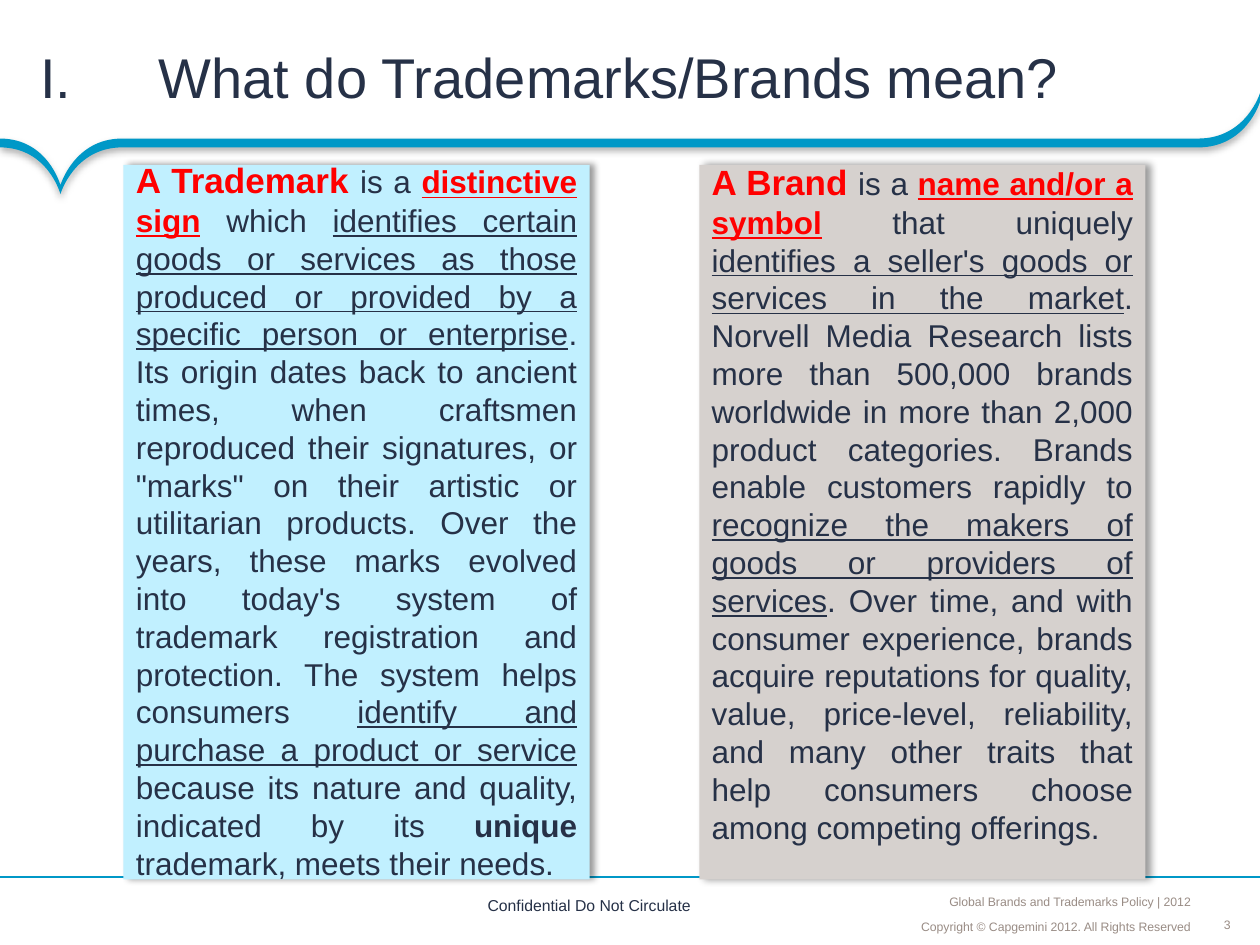
from lxml.etree import SubElement as Sub
from pptx import Presentation
from pptx.dml.color import RGBColor
from pptx.enum.shapes import MSO_CONNECTOR as Line, MSO_SHAPE as Shape
from pptx.enum.text import MSO_ANCHOR as Anchor, PP_ALIGN as Align
from pptx.oxml.ns import qn
from pptx.util import Emu, Inches, Pt

NAVY, RED, BLUE, GREY = "263147", "FF0000", "0098C7", "998C85"

# Run styles: size, colour, bold, underline
LEAD = (20, RED, True, False)
KEY = (18, RED, True, True)
BODY = (18, NAVY, False, False)
LINK = (18, NAVY, False, True)
BOLD = (18, NAVY, True, False)
FOOT = (7, GREY, False, False)

MARK = [
    ("A Trademark ", LEAD), ("is a ", BODY), ("distinctive sign", KEY),
    (" which ", BODY),
    ("identifies certain goods or services as those produced or provided "
     "by a specific person or enterprise", LINK),
    (". Its origin dates back to ancient times, when craftsmen reproduced "
     "their signatures, or \"marks\" on their artistic or utilitarian "
     "products. Over the years, these marks evolved into today's system of "
     "trademark registration and protection. The system helps consumers ",
     BODY),
    ("identify and purchase a product or service ", LINK),
    ("because its nature and quality, indicated by its ", BODY),
    ("unique", BOLD), (" trademark, meets their needs.", BODY),
]
BRAND = [
    ("A Brand ", LEAD), ("is a ", BODY), ("name and/or a symbol", KEY),
    (" that uniquely ", BODY),
    ("identifies a seller's goods or services in the market", LINK),
    (". Norvell Media Research lists more than 500,000 brands worldwide in "
     "more than 2,000 product categories. Brands enable customers rapidly "
     "to ", BODY),
    ("recognize the makers of goods or providers of services", LINK),
    (". Over time, and with consumer experience, brands acquire reputations "
     "for quality, value, price-level, reliability, and many other traits "
     "that help consumers choose among competing offerings.", BODY),
]


def color(code):
    return RGBColor.from_string(code)


def add_run(para, text, style):
    run = para.add_run()
    run.text = text
    font = run.font
    font.name = "Arial"
    size, code, font.bold, font.underline = style
    font.size = Pt(size)
    font.color.rgb = color(code)


def set_frame(frame, anchor, left, top, right, low):
    frame.word_wrap = True
    frame.vertical_anchor = anchor
    frame.margin_left, frame.margin_top = Inches(left), Inches(top)
    frame.margin_right, frame.margin_bottom = Inches(right), Inches(low)


def add_shadow(shape, alpha, blur, dist, angle):
    shape.shadow.inherit = False
    effects = shape._element.spPr.find(qn("a:effectLst"))
    outer = Sub(effects, qn("a:outerShdw"), blurRad=str(Pt(blur)),
                dist=str(Pt(dist)), dir=str(angle * 60000),
                algn="ctr", rotWithShape="0")
    black = Sub(outer, qn("a:srgbClr"), val="000000")
    Sub(black, qn("a:alpha"), val=str(alpha * 1000))


def paint(shape, code):
    shape.fill.solid()
    shape.fill.fore_color.rgb = color(code)
    shape.line.fill.background()


def make_curves(form):
    """Turn each three line points of an outline into one cubic curve."""
    outline = next(form._element.iter(qn("a:path")))
    lines = outline.findall(qn("a:lnTo"))
    for first in range(0, len(lines), 3):
        cubic = lines[first].makeelement(qn("a:cubicBezTo"))
        lines[first].addprevious(cubic)
        for line in lines[first:first + 3]:
            cubic.append(line[0])
            outline.remove(line)


def add_band(slide):
    start = (9.51, 1.1)
    # Two control points and an end for each curve
    curves = [
        [(0.97, 1.1)] * 3,
        [(0.59, 1.1), (0.48, 1.47), (0.48, 1.47)],
        [(0.48, 1.47), (0.38, 1.1), (0, 1.1)],
        [(0, 1.17)] * 3,
        [(0.38, 1.17), (0.48, 1.54), (0.48, 1.54)],
        [(0.48, 1.54), (0.59, 1.17), (0.97, 1.17)],
        [(9.51, 1.17)] * 3,
        [(9.89, 1.17), (10, 0.81), (10, 0.81)],
        [(10, 0.74)] * 3,
        [(10, 0.74), (9.89, 1.1), start],
    ]
    points = [(Inches(x), Inches(y)) for part in curves for x, y in part]
    form = slide.shapes.build_freeform(*map(Inches, start), scale=1.0)
    form.add_line_segments(points, close=True)
    band = form.convert_to_shape(Emu(0), Emu(0))
    make_curves(band)
    paint(band, BLUE)
    add_shadow(band, 31, 4, 2, 90)


def add_rule(slide, y):
    rule = slide.shapes.add_connector(
        Line.STRAIGHT, Inches(10), Inches(y), Inches(0), Inches(y))
    rule.line.color.rgb = color(BLUE)
    rule.line.width = Pt(0.75)
    Sub(rule._element.spPr, qn("a:effectLst"))


def add_title(slide, text):
    title = slide.shapes.title
    title.left, title.top = Inches(0), Inches(0)
    title.width, title.height = Inches(10), Inches(1.3)
    set_frame(title.text_frame, Anchor.MIDDLE, 0.32, 0.04, 0.18, 0.05)
    para = title.text_frame.paragraphs[0]
    props = para._p.get_or_add_pPr()
    props.set("marL", str(Inches(0.94)))
    props.set("indent", str(-Inches(0.94)))
    Sub(props, qn("a:buFont"), typeface="Arial")
    Sub(props, qn("a:buAutoNum"), type="romanUcPeriod")
    para.alignment = Align.LEFT
    para.line_spacing = 0.85
    add_run(para, text, (32, NAVY, False, False))


def add_panel(slide, left, width, fill, runs, anchor):
    panel = slide.shapes.add_shape(
        Shape.RECTANGLE, Inches(left), Inches(1.31),
        Inches(width), Inches(5.67))
    paint(panel, fill)
    add_shadow(panel, 40, 4, 3, 0)
    set_frame(panel.text_frame, anchor, 0.1, 0, 0.1, 0)
    para = panel.text_frame.paragraphs[0]
    para.alignment = Align.JUSTIFY
    para.line_spacing = Pt(21.6)
    for text, style in runs:
        add_run(para, text, style)


def add_note(slide, box, text, style, align, anchor, pad):
    note = slide.shapes.add_textbox(*map(Inches, box))
    set_frame(note.text_frame, anchor, *pad)
    para = note.text_frame.paragraphs[0]
    para.alignment = align
    add_run(para, text, style)


def main():
    deck = Presentation()
    deck.slide_width, deck.slide_height = Inches(10), Inches(7.5)
    slide = deck.slides.add_slide(deck.slide_layouts[5])

    # Header and footer rule
    add_title(slide, "What do Trademarks/Brands mean?")
    add_band(slide)
    add_rule(slide, 6.96)

    # Definitions
    add_panel(slide, 0.98, 3.7, "C1F0FF", MARK, Anchor.MIDDLE)
    add_panel(slide, 5.55, 3.54, "D6D1CE", BRAND, Anchor.TOP)

    # Footer
    pad = (0.04, 0.04, 0.05, 0.03)
    add_note(slide, (6.81, 7.03, 2.69, 0.21),
             "Global Brands and Trademarks Policy | 2012",
             FOOT, Align.RIGHT, Anchor.BOTTOM, pad)
    add_note(slide, (6.81, 7.24, 2.69, 0.2),
             "Copyright © Capgemini 2012. All Rights Reserved",
             FOOT, Align.RIGHT, Anchor.BOTTOM, pad)
    add_note(slide, (9.65, 7.28, 0.18, 0.12), "3",
             FOOT, Align.CENTER, Anchor.MIDDLE, (0,) * 4)
    add_note(slide, (3.27, 7.06, 2.33, 0.25), "Confidential Do Not Circulate",
             (9, NAVY, False, False), Align.LEFT, Anchor.TOP,
             (0.6, 0.05, 0, 0.05))

    deck.save("out.pptx")


if __name__ == "__main__":
    main()
